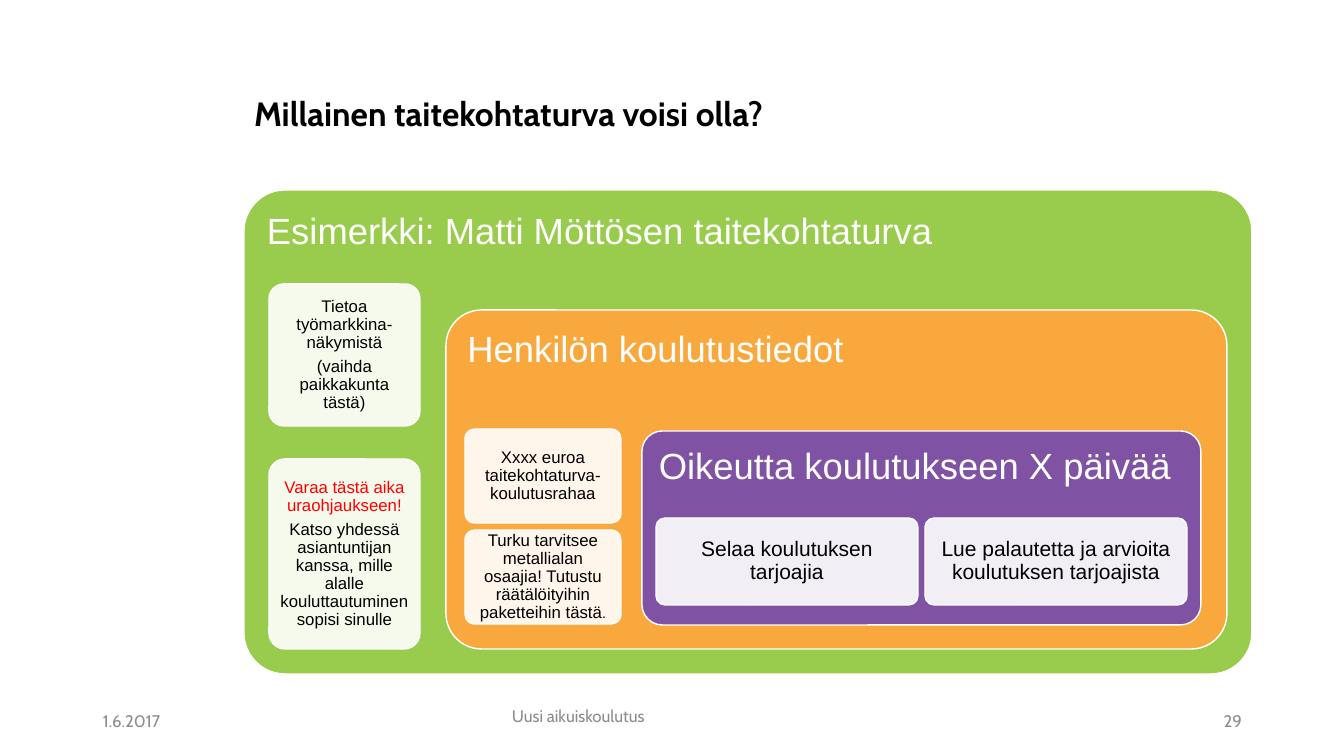
"""Build the slide on the nested parts of a transition security scheme."""
from lxml.etree import SubElement
from pptx import Presentation
from pptx.dml.color import RGBColor
from pptx.enum.shapes import MSO_SHAPE
from pptx.enum.text import MSO_ANCHOR, MSO_AUTO_SIZE, PP_ALIGN
from pptx.oxml.ns import qn
from pptx.util import Pt

EMU_PER_PX = 12192000 / 1344
BLACK = RGBColor(0x00, 0x00, 0x00)
WHITE = RGBColor(0xFF, 0xFF, 0xFF)
RED = RGBColor(0xFF, 0x00, 0x00)
GREY = RGBColor(0x8C, 0x8C, 0x8C)
GREEN = RGBColor(0x99, 0xCC, 0x4D)
ORANGE = RGBColor(0xF9, 0xA8, 0x3D)
PURPLE = RGBColor(0x7F, 0x52, 0xA3)


def px(length):
    return round(length * EMU_PER_PX)


class SlideBuilder:
    heading_font = "Cabin"
    body_font = "Arial"

    def __init__(self, slide):
        self.slide = slide

    def format_text(self, paragraph, font_name, size, color, align, bold=False):
        paragraph.alignment = align
        for run in paragraph.runs:
            run.font.name = font_name
            run.font.size = Pt(size)
            run.font.bold = bold
            run.font.color.rgb = color

    def title(self, text, left, top, width, height):
        heading = self.slide.shapes.title
        heading.left, heading.top = px(left), px(top)
        heading.width, heading.height = px(width), px(height)
        frame = heading.text_frame
        frame.text = text
        frame.auto_size = MSO_AUTO_SIZE.NONE
        frame.vertical_anchor = MSO_ANCHOR.MIDDLE
        frame.paragraphs[0].line_spacing = 0.9
        self.format_text(frame.paragraphs[0], self.heading_font, 24, BLACK, PP_ALIGN.LEFT, True)

    def rounded_box(self, box, fill, radius, lines, size, color, align, anchor, inset):
        shape = self.slide.shapes.add_shape(MSO_SHAPE.ROUNDED_RECTANGLE, *map(px, box))
        shape.adjustments[0] = radius
        shape.shadow.inherit = False
        shape.fill.solid()
        shape.fill.fore_color.rgb = fill
        shape.line.color.rgb = WHITE
        shape.line.width = Pt(1)
        frame = shape.text_frame
        frame.word_wrap = True
        frame.vertical_anchor = anchor
        frame.margin_left = frame.margin_right = px(inset)
        frame.margin_top = frame.margin_bottom = px(inset)
        frame.text = "\n".join(lines)
        for paragraph in frame.paragraphs:
            paragraph.line_spacing = 0.9
            paragraph.space_after = Pt(size * 0.35)
            self.format_text(paragraph, self.body_font, size, color, align)
        return shape

    def layer(self, text, box, fill, radius=0.105):
        self.rounded_box(box, fill, radius, [text], 26, WHITE,
                         PP_ALIGN.LEFT, MSO_ANCHOR.TOP, 11)

    def card(self, lines, box, size=12):
        shape = self.rounded_box(box, WHITE, 0.105, lines, size, BLACK,
                                 PP_ALIGN.CENTER, MSO_ANCHOR.MIDDLE, 5)
        white = shape.fill._xPr.find(qn("a:solidFill"))[0]
        SubElement(white, qn("a:alpha"), val="90000")
        return shape.text_frame.paragraphs

    def footer(self, text, left, width, align, anchor):
        box = self.slide.shapes.add_textbox(px(left), px(701), px(width), px(40))
        frame = box.text_frame
        frame.word_wrap = True
        frame.vertical_anchor = anchor
        frame.text = text
        self.format_text(frame.paragraphs[0], self.heading_font, 12, GREY, align)


def main():
    deck = Presentation()
    deck.slide_width, deck.slide_height = px(1344), px(756)
    page = SlideBuilder(deck.slides.add_slide(deck.slide_layouts[5]))

    page.title("Millainen taitekohtaturva voisi olla?", 244, 43, 1008, 146)

    page.layer("Esimerkki: Matti Möttösen taitekohtaturva", (244, 190, 1008, 484), GREEN, 0.085)
    page.card(["Tietoa työmarkkina-näkymistä", "(vaihda paikkakunta tästä)"],
              (269, 284, 151, 142))
    guidance = page.card(
        ["Varaa tästä aika uraohjaukseen!",
         "Katso yhdessä asiantuntijan kanssa, mille alalle kouluttautuminen sopisi sinulle"],
        (269, 459, 151, 190))
    guidance[0].runs[0].font.color.rgb = RED

    page.layer("Henkilön koulutustiedot", (446, 310, 781, 339), ORANGE)
    page.card(["Xxxx euroa taitekohtaturva-koulutusrahaa"], (465, 429, 156, 94))
    packages = page.card(
        ["Turku tarvitsee metallialan osaajia! Tutustu räätälöityihin paketteihin tästä"],
        (465, 530, 156, 94))
    full_stop = packages[0].add_run()
    full_stop.text = "."
    full_stop.font.name = page.body_font
    full_stop.font.size = Pt(10)
    full_stop.font.color.rgb = BLACK

    page.layer("Oikeutta koulutukseen X päivää", (642, 431, 559, 194), PURPLE)
    provider_cards = ["Selaa koulutuksen tarjoajia",
                      "Lue palautetta ja arvioita koulutuksen tarjoajista"]
    for column, text in enumerate(provider_cards):
        page.card([text], (656 + 269 * column, 518, 262, 87), 15)

    page.footer("1.6.2017", 93, 302, PP_ALIGN.LEFT, MSO_ANCHOR.MIDDLE)
    page.footer("Uusi aikuiskoulutus", 502, 341, PP_ALIGN.LEFT, MSO_ANCHOR.TOP)
    page.footer("29", 950, 302, PP_ALIGN.RIGHT, MSO_ANCHOR.MIDDLE)

    deck.save("out.pptx")


if __name__ == "__main__":
    main()
